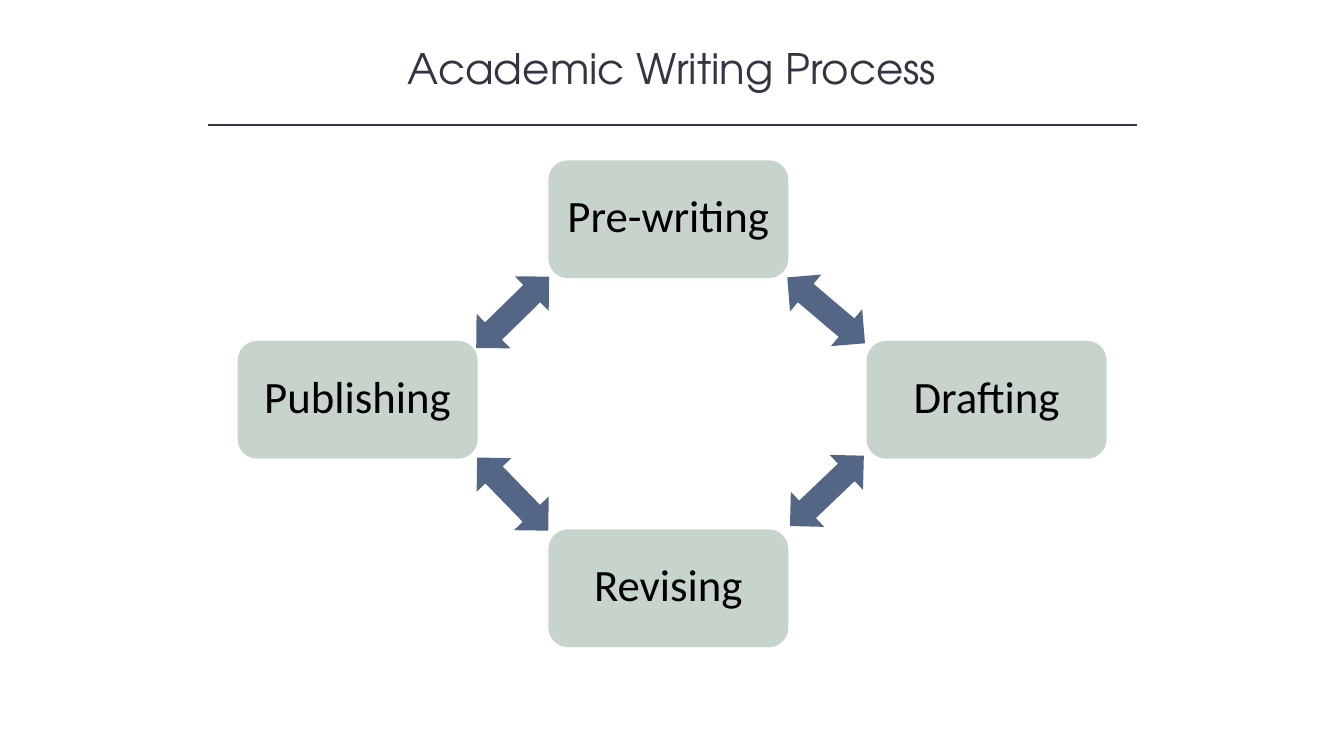
"""Builds the Academic Writing Process slide."""
from dataclasses import dataclass

from lxml import etree
from pptx import Presentation
from pptx.dml.color import RGBColor
from pptx.enum import shapes, text
from pptx.oxml.ns import qn
from pptx.util import Cm, Pt


@dataclass(frozen=True)
class Theme:
    ink: RGBColor = RGBColor.from_string("323542")
    label: RGBColor = RGBColor.from_string("000000")
    box: RGBColor = RGBColor.from_string("C7D4CB")
    arrow: RGBColor = RGBColor.from_string("546685")
    title_font: str = "TeX Gyre Adventor"
    label_font: str = "Calibri"
    title_size: int = 30
    label_size: int = 32


THEME = Theme()
BOX_W, BOX_H = 6.05, 2.97
ARROW_W, ARROW_H = 2.57, 1.22
STAGES = [
    ("Pre-writing", 13.82, 4.04),
    ("Drafting", 21.84, 8.59),
    ("Revising", 13.82, 13.34),
    ("Publishing", 5.99, 8.59),
]
ARROWS = [
    (12.92, 7.87, 315.6),
    (12.92, 12.45, 225.8),
    (20.82, 7.82, 220.3),
    (20.84, 12.37, 316.4),
]


def write(tf, words, font, size, color):
    tf.word_wrap = True
    tf.vertical_anchor = text.MSO_ANCHOR.MIDDLE
    p = tf.paragraphs[0]
    p.alignment = text.PP_ALIGN.CENTER
    r = p.add_run()
    r.text = words
    r.font.name = font
    r.font.size = Pt(size)
    r.font.color.rgb = color


def add_title(s, words):
    sp = s.shapes.add_textbox(Cm(4.24), Cm(0.94), Cm(25.4), Cm(1.55))
    write(sp.text_frame, words, THEME.title_font, THEME.title_size, THEME.ink)


def add_rule(s, left, right, y):
    line = s.shapes.add_connector(
        shapes.MSO_CONNECTOR.STRAIGHT, Cm(left), Cm(y), Cm(right), Cm(y))
    line.line.color.rgb = THEME.ink
    line.line.width = Pt(1)
    etree.SubElement(line._element.spPr, qn("a:effectLst"))


def add_solid(s, kind, left, top, width, height, color):
    sp = s.shapes.add_shape(kind, Cm(left), Cm(top), Cm(width), Cm(height))
    sp.shadow.inherit = False
    sp.fill.solid()
    sp.fill.fore_color.rgb = color
    sp.line.fill.background()
    return sp


def add_stage(s, words, left, top):
    sp = add_solid(s, shapes.MSO_SHAPE.ROUNDED_RECTANGLE,
                   left, top, BOX_W, BOX_H, THEME.box)
    tf = sp.text_frame
    tf.margin_left = tf.margin_right = tf.margin_top = Cm(0)
    tf.margin_bottom = Cm(0.23)
    write(tf, words, THEME.label_font, THEME.label_size, THEME.label)


def add_arrow(s, x, y, angle):
    sp = add_solid(s, shapes.MSO_SHAPE.LEFT_RIGHT_ARROW, x - ARROW_W / 2,
                   y - ARROW_H / 2, ARROW_W, ARROW_H, THEME.arrow)
    sp.rotation = angle


def main():
    prs = Presentation()
    prs.slide_width, prs.slide_height = Cm(33.87), Cm(19.05)
    s = prs.slides.add_slide(prs.slide_layouts[6])
    add_title(s, "Academic Writing Process")
    add_rule(s, 5.23, 28.65, 3.15)
    for stage in STAGES:
        add_stage(s, *stage)
    for arrow in ARROWS:
        add_arrow(s, *arrow)
    prs.save("out.pptx")


if __name__ == "__main__":
    main()
